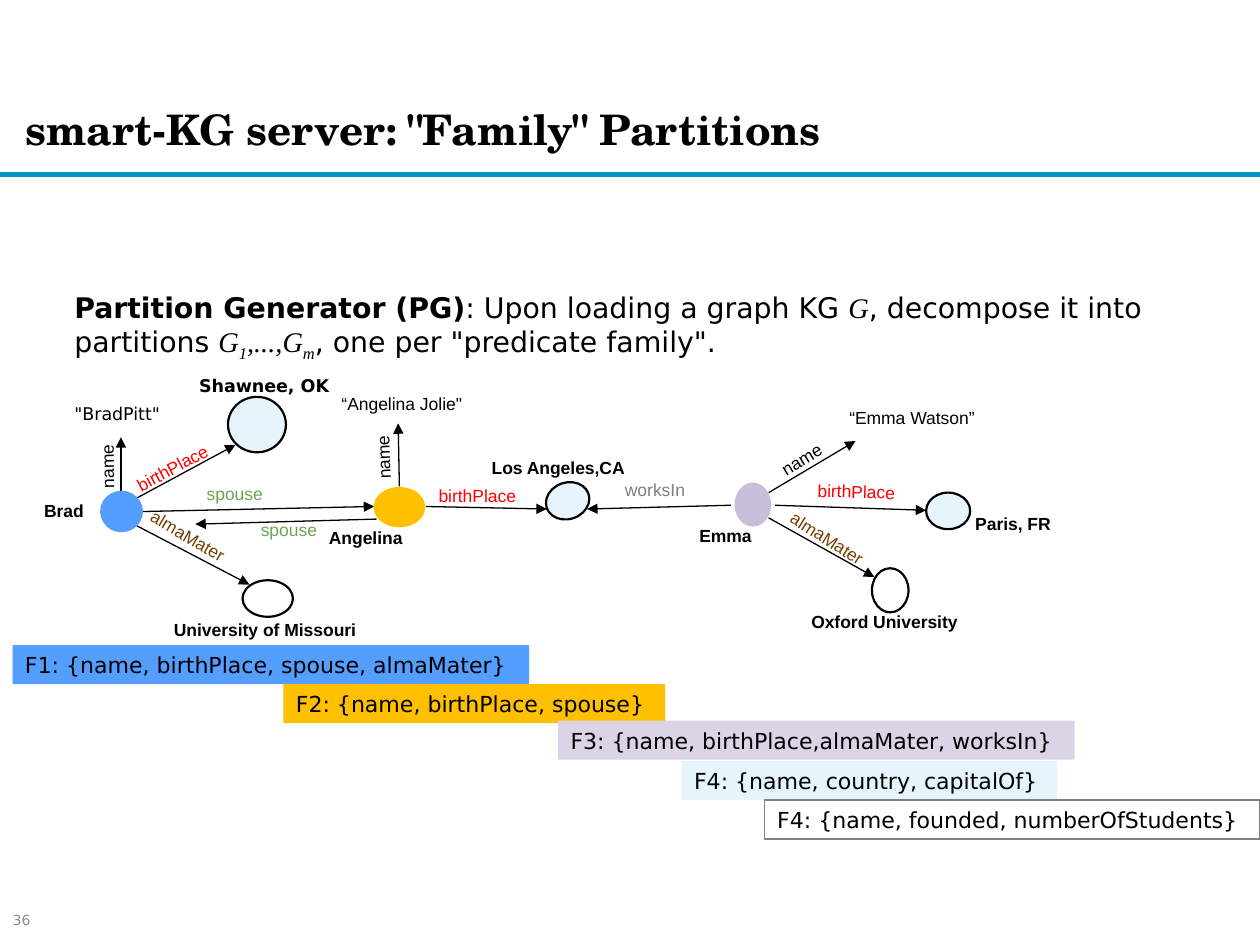
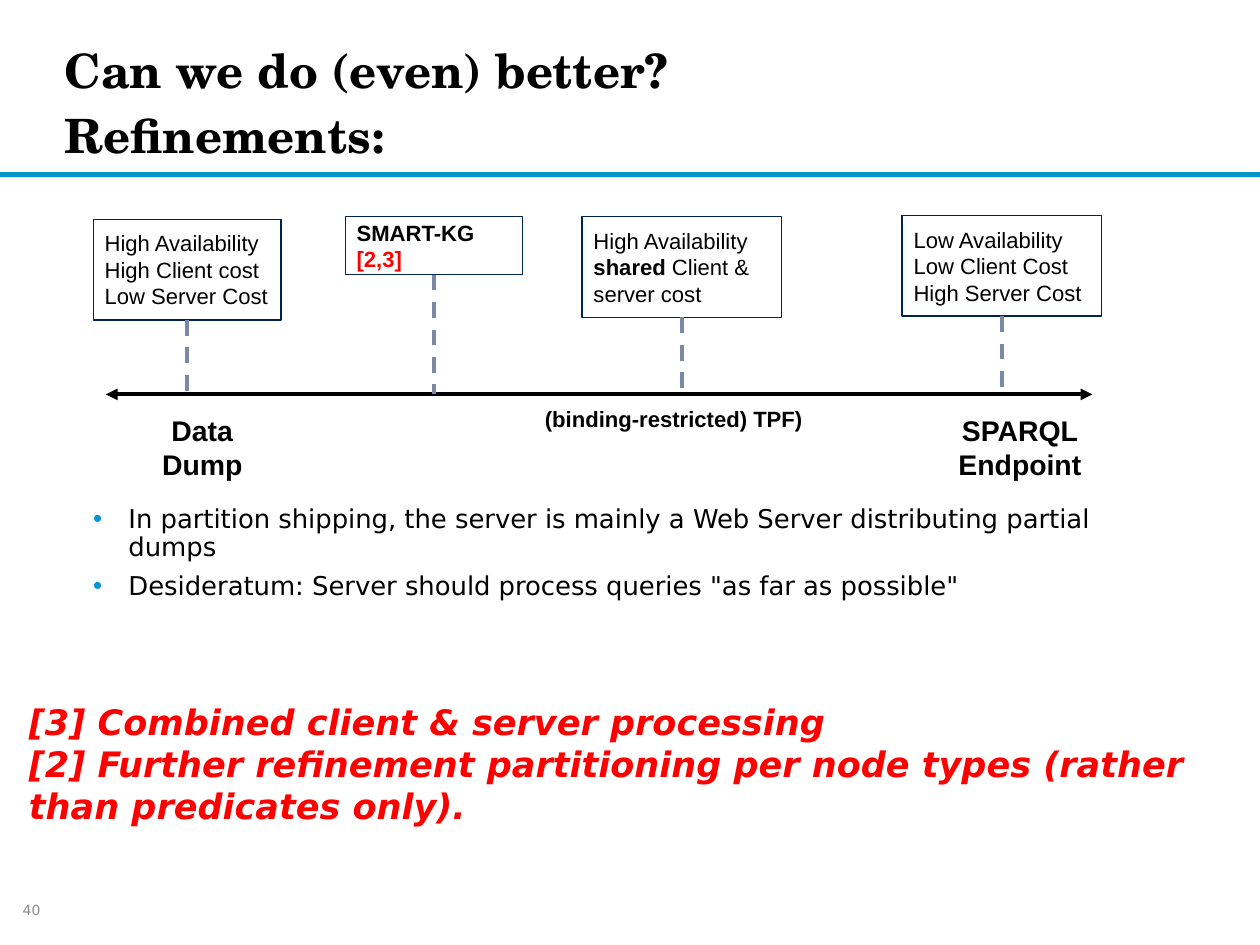
from lxml import etree
from pptx import Presentation
from pptx.dml.color import RGBColor
from pptx.enum.dml import MSO_LINE
from pptx.enum.shapes import MSO_CONNECTOR, MSO_SHAPE
from pptx.enum.text import MSO_ANCHOR, MSO_AUTO_SIZE, PP_ALIGN
from pptx.oxml.ns import qn
from pptx.util import Inches, Pt

RECTANGLE, OVAL = MSO_SHAPE.RECTANGLE, MSO_SHAPE.OVAL
STRAIGHT, DASH = MSO_CONNECTOR.STRAIGHT, MSO_LINE.DASH
TOP, MIDDLE = MSO_ANCHOR.TOP, MSO_ANCHOR.MIDDLE
LEFT, CENTER, RIGHT = PP_ALIGN.LEFT, PP_ALIGN.CENTER, PP_ALIGN.RIGHT
FIXED_SIZE = MSO_AUTO_SIZE.NONE
BOTTOM_SIDE = 2
TITLE_ONLY, TITLE_AND_BODY = 5, 1

BLACK = RGBColor(0x00, 0x00, 0x00)
WHITE = RGBColor(0xFF, 0xFF, 0xFF)
RED = RGBColor(0xFF, 0x00, 0x00)
GREEN = RGBColor(0x6A, 0xA8, 0x4F)
BROWN = RGBColor(0x78, 0x3F, 0x04)
GRAY = RGBColor(0x7F, 0x7F, 0x7F)
BORDER_GRAY = RGBColor(0x80, 0x80, 0x80)
NUMBER_GRAY = RGBColor(0x8C, 0x8C, 0x8C)
BAND_FILL = RGBColor(0x0C, 0x94, 0xB7)
ACCENT = RGBColor(0x00, 0x96, 0xD3)
BLUE = RGBColor(0x53, 0x9E, 0xFF)
AMBER = RGBColor(0xFF, 0xC0, 0x00)
LILAC = RGBColor(0xC9, 0xBE, 0xD9)
PALE_LILAC = RGBColor(0xDB, 0xD3, 0xE6)
PALE_BLUE = RGBColor(0xE6, 0xF5, 0xFB)
NAVY = RGBColor(0x00, 0x23, 0x50)
SLATE = RGBColor(0x7A, 0x8A, 0xA6)

SANS, LABEL_FONT = "DejaVu Sans", "Arial"
TITLE_FONT, MATH_FONT = "TeX Gyre Schola", "Times New Roman"

# The slide is a grid of 100 columns by 75 rows of square cells.
COLUMNS, ROWS = 100, 75
CELL = Inches(0.1)


def cells(*counts):
    return [round(count * CELL) for count in counts]


def style_font(font, name=None, size=None, color=None, bold=None, italic=None):
    if name:
        font.name = name
    if size:
        font.size = Pt(size)
    if color is not None:
        font.color.rgb = color
    if bold is not None:
        font.bold = bold
    if italic is not None:
        font.italic = italic


def fill_text(shape, paragraphs, align=LEFT, anchor=TOP, insets=(0.9, 0.9), **font):
    """Each paragraph is a string or a list of (text, run format) pairs."""
    frame = shape.text_frame
    frame.word_wrap = True
    frame.auto_size = FIXED_SIZE
    frame.vertical_anchor = anchor
    frame.margin_left, frame.margin_top = cells(*insets)
    frame.margin_right, frame.margin_bottom = cells(*insets)
    for index, content in enumerate(paragraphs):
        paragraph = frame.add_paragraph() if index else frame.paragraphs[0]
        paragraph.alignment = align
        style_font(paragraph.font, **font)
        runs = [(content, {})] if isinstance(content, str) else content
        for text, run_format in runs:
            run = paragraph.add_run()
            run.text = text
            run_format = dict(run_format)
            baseline = run_format.pop("baseline", None)
            style_font(run.font, **run_format)
            if baseline:
                run._r.get_or_add_rPr().set("baseline", str(baseline))


def add_text(slide, area, paragraphs, rotation=0, **text_format):
    box = slide.shapes.add_textbox(*cells(*area))
    box.rotation = rotation
    fill_text(box, paragraphs, **text_format)


def add_label(slide, area, text, rotation=0, name=LABEL_FONT, color=BLACK, **extra):
    add_text(slide, area, [text], rotation, insets=(0.9, 0.4),
             name=name, size=10, color=color, **extra)


def add_block(slide, kind, area, fill=None, line=None, line_width=0.75):
    shape = slide.shapes.add_shape(kind, *cells(*area))
    shape.shadow.inherit = False
    if fill is None:
        shape.fill.background()
    else:
        shape.fill.solid()
        shape.fill.fore_color.rgb = fill
    if line is None:
        shape.line.fill.background()
    else:
        shape.line.color.rgb = line
        shape.line.width = Pt(line_width)
    return shape


def add_node(slide, center, size, fill, outlined=True, rotation=0):
    (x, y), (width, height) = center, size
    node = add_block(slide, OVAL, (x - width / 2, y - height / 2, width, height),
                     fill, BLACK if outlined else None, 1.25)
    node.rotation = rotation


def add_line(slide, start, end, color=BLACK, width=0.75, arrows=()):
    line = slide.shapes.add_connector(STRAIGHT, *cells(*start, *end))
    line.line.color.rgb = color
    line.line.width = Pt(width)
    outline = line.line._get_or_add_ln()
    for arrow in arrows:
        etree.SubElement(outline, qn("a:" + arrow), type="triangle")
    etree.SubElement(line._element.spPr, qn("a:effectLst"))
    return line


def add_slide(presentation, layout, title, title_area, title_size, line_spacing=1.0):
    slide = presentation.slides.add_slide(presentation.slide_layouts[layout])
    add_block(slide, RECTANGLE, (0, 13.7, COLUMNS, 0.3), BAND_FILL, ACCENT, 1)
    shape = slide.shapes.title
    shape.left, shape.top, shape.width, shape.height = cells(*title_area)
    fill_text(shape, [title], anchor=MIDDLE, insets=(0, 0),
              name=TITLE_FONT, size=title_size, color=BLACK, bold=True)
    shape.text_frame.paragraphs[0].line_spacing = line_spacing
    return slide


def add_slide_number(slide, area, number):
    add_text(slide, area, [number], anchor=MIDDLE, insets=(0, 0.5),
             name=SANS, size=8, color=NUMBER_GRAY)


def fill_bullets(body, area, items):
    body.left, body.top, body.width, body.height = cells(*area)
    frame = body.text_frame
    frame.auto_size = FIXED_SIZE
    frame.margin_left = frame.margin_right = 0
    frame.margin_top = frame.margin_bottom = CELL // 2
    for index, item in enumerate(items):
        paragraph = frame.add_paragraph() if index else frame.paragraphs[0]
        paragraph.text = item
        properties = paragraph._p.get_or_add_pPr()
        properties.set("marL", str(Inches(0.51)))
        properties.set("indent", str(Inches(-0.28)))
        color = etree.SubElement(properties, qn("a:buClr"))
        etree.SubElement(color, qn("a:srgbClr"), val=str(ACCENT))
        etree.SubElement(properties, qn("a:buChar"), char="•")
        paragraph.line_spacing = 0.9
        paragraph.space_before, paragraph.space_after = Pt(0), Pt(6)
        style_font(paragraph.font, SANS, 14.8, BLACK)


def add_family_graph(slide):
    # Edges
    for start, end in [
        ((31.7, 38.6), (31.6, 33.6)), ((33.8, 40.2), (43.4, 40.4)),
        ((9.8, 40.1), (18.7, 35.3)), ((61, 41.1), (69.4, 45.8)),
        ((61, 39.1), (67.9, 35)), ((58, 40.1), (46.6, 40.4)),
        ((10.8, 41.7), (19.8, 46.4)), ((9.6, 39.2), (9.6, 34.7)),
        ((11.3, 40.6), (29.7, 40.2)), ((29.9, 41.2), (15.5, 41.6)),
        ((61.5, 40.1), (73.5, 40.5)),
    ]:
        add_line(slide, start, end, arrows=["tailEnd"])

    # People, places and universities
    for center, size, fill in [((9.65, 40.6), (3.4, 3.3), BLUE),
                               ((31.7, 40.25), (4.1, 3.2), AMBER),
                               ((59.75, 40.05), (2.9, 3.5), LILAC)]:
        add_node(slide, center, size, fill, outlined=False)
    add_node(slide, (20.4, 33.7), (4.6, 4.4), PALE_BLUE)
    add_node(slide, (45.05, 39.75), (3.5, 2.9), PALE_BLUE, rotation=341.5)
    add_node(slide, (75.25, 40.55), (3.5, 2.9), PALE_BLUE)
    add_node(slide, (21.25, 47.5), (4, 2.9), WHITE)
    add_node(slide, (70.65, 46.85), (2.9, 3.5), WHITE)

    # Node names
    for area, text, align in [
        ((2.6, 39.3, 5.4, 2.4), "Brad", LEFT),
        ((25.2, 41.4, 12.1, 2.5), "Angelina", LEFT),
        ((54.6, 41.3, 8.4, 2.5), "Emma", LEFT),
        ((37.5, 35.9, 13.6, 2.4), "Los Angeles,CA", CENTER),
        ((73.6, 40.3, 13.6, 2.4), "Paris, FR", CENTER),
        ((12.9, 48.7, 18.3, 2.8), "University of Missouri", LEFT),
        ((61.6, 48.1, 15.3, 2.7), "Oxford University", RIGHT),
    ]:
        add_label(slide, area, text, align=align, bold=True)
    add_label(slide, (14.9, 29.4, 13.7, 3), "Shawnee, OK", name=SANS, bold=True)

    # Literal values
    add_label(slide, (5, 31.6, 9.8, 2.6), '"BradPitt"', name=SANS)
    add_label(slide, (26.2, 30.8, 12.6, 2.1), '“Angelina Jolie"')
    add_label(slide, (66.5, 31.9, 14.9, 2.1), "“Emma Watson”")

    # Predicates, one colour each
    predicate_colors = {"name": BLACK, "birthPlace": RED, "spouse": GREEN,
                        "almaMater": BROWN, "worksIn": GRAY}
    for area, predicate, rotation in [
        ((5, 35.9, 6, 1.5), "name", 269),
        ((27, 35.1, 6, 1.7), "name", 267.9),
        ((60.6, 34.6, 7.8, 1.7), "name", 329.1),
        ((9.5, 35.8, 8.5, 1.8), "birthPlace", 331.8),
        ((33.9, 38.1, 8.5, 1.8), "birthPlace", 0),
        ((64, 37.8, 10.1, 1.4), "birthPlace", 1.8),
        ((15.5, 37.9, 9.7, 2.4), "spouse", 359.7),
        ((19.8, 40.8, 7.3, 1.4), "spouse", 0),
        ((10.5, 41.9, 10.9, 2.8), "almaMater", 30.3),
        ((61.3, 42.4, 11.7, 2.2), "almaMater", 32.6),
        ((48.7, 37.6, 10, 2.6), "worksIn", 0),
    ]:
        add_label(slide, area, predicate, rotation, color=predicate_colors[predicate])


def build_partitions_slide(presentation):
    slide = add_slide(presentation, TITLE_ONLY, 'smart-KG server: "Family" Partitions',
                      (2, 4.8, 86.2, 10.9), 24)
    symbol = {"name": MATH_FONT, "italic": True}
    subscript = {**symbol, "baseline": -25000}
    definition = [("Partition Generator (PG)", {"bold": True}),
                  (": Upon loading a graph KG ", {}), ("G", symbol),
                  (", decompose it into partitions ", {}),
                  ("G", symbol), ("1", subscript), (",...,G", symbol), ("m", subscript),
                  (', one per "predicate family".', {})]
    add_text(slide, (5, 22.1, 89.6, 12.3), [definition],
             name=SANS, size=16.2, color=BLACK)
    add_family_graph(slide)

    # Staircase of predicate families
    for left, top, width, fill, line, text in [
        (1, 51.2, 41, BLUE, None, "F1: {name, birthPlace, spouse, almaMater}"),
        (22.5, 54.3, 30.3, AMBER, None, "F2: {name, birthPlace, spouse}"),
        (44.3, 57.2, 41, PALE_LILAC, None, "F3: {name, birthPlace,almaMater, worksIn}"),
        (54.1, 60.4, 29.8, PALE_BLUE, None, "F4: {name, country, capitalOf}"),
        (60.7, 63.5, 39.3, WHITE, BORDER_GRAY, "F4: {name, founded, numberOfStudents}"),
    ]:
        bar = add_block(slide, RECTANGLE, (left, top, width, 3.1), fill, line)
        fill_text(bar, [text], insets=(1, 0.5), name=SANS, size=12.6, color=BLACK)
    add_slide_number(slide, (1, 71.5, 22.5, 3), "36")


def build_refinements_slide(presentation):
    slide = add_slide(presentation, TITLE_AND_BODY, "Can we do (even) better? Refinements:",
                      (5.1, 1.8, 72.7, 11.9), 27, 1.15)

    # Spectrum axis with a boxed trade-off hanging above each position
    axis_row = 31.3
    add_line(slide, (8.4, axis_row), (86.7, axis_row), width=2.25,
             arrows=["headEnd", "tailEnd"])
    bold = {"bold": True}
    for area, lines in [
        ((7.4, 17.4, 14.9, 8), ["High Availability", "High Client cost", "Low Server Cost"]),
        ((27.4, 17.2, 14.1, 4.6), [[("SMART-KG", bold)],
                                   [("[2,3]", {**bold, "color": RED})]]),
        ((46.2, 17.2, 15.8, 8), ["High Availability",
                                 [("shared", bold), (" Client & server cost", {})]]),
        ((71.6, 17.1, 15.8, 8), ["Low Availability", "Low Client Cost", "High Server Cost"]),
    ]:
        left, top, width, height = area
        box = add_block(slide, RECTANGLE, area, line=NAVY)
        fill_text(box, lines, anchor=MIDDLE, name=LABEL_FONT, size=12.6, color=BLACK)
        middle = left + width / 2
        drop = add_line(slide, (middle, top + height), (middle, axis_row), SLATE, 2.25)
        drop.line.dash_style = DASH
        drop.begin_connect(box, BOTTOM_SIDE)

    # Axis labels
    for left, lines in [(7.2, ["Data", "Dump"]), (72.1, ["SPARQL", "Endpoint"])]:
        add_text(slide, (left, 32.4, 17.7, 2.7), lines, align=CENTER, insets=(0.9, 0.4),
                 name=LABEL_FONT, size=16.2, color=BLACK, bold=True)
    add_text(slide, (41.2, 31.3, 24.5, 4.6), ["(binding-restricted) TPF)"], align=CENTER,
             name=LABEL_FONT, size=12.6, color=BLACK, bold=True)

    # Arguments and refinements
    fill_bullets(slide.placeholders[1], (5.1, 39.7, 84.9, 8.6), [
        "In partition shipping, the server is mainly a Web Server distributing partial dumps",
        'Desideratum: Server should process queries "as far as possible"'])
    add_text(slide, (1.4, 54.7, 98.6, 9), [
        "[3] Combined client & server processing",
        "[2] Further refinement partitioning per node types (rather than predicates only)."],
        name=SANS, size=20, color=RED, bold=True, italic=True)
    add_slide_number(slide, (1.8, 70.5, 35.2, 3.4), "40")


def main():
    presentation = Presentation()
    presentation.slide_width, presentation.slide_height = cells(COLUMNS, ROWS)
    build_partitions_slide(presentation)
    build_refinements_slide(presentation)
    presentation.save("out.pptx")


if __name__ == "__main__":
    main()
